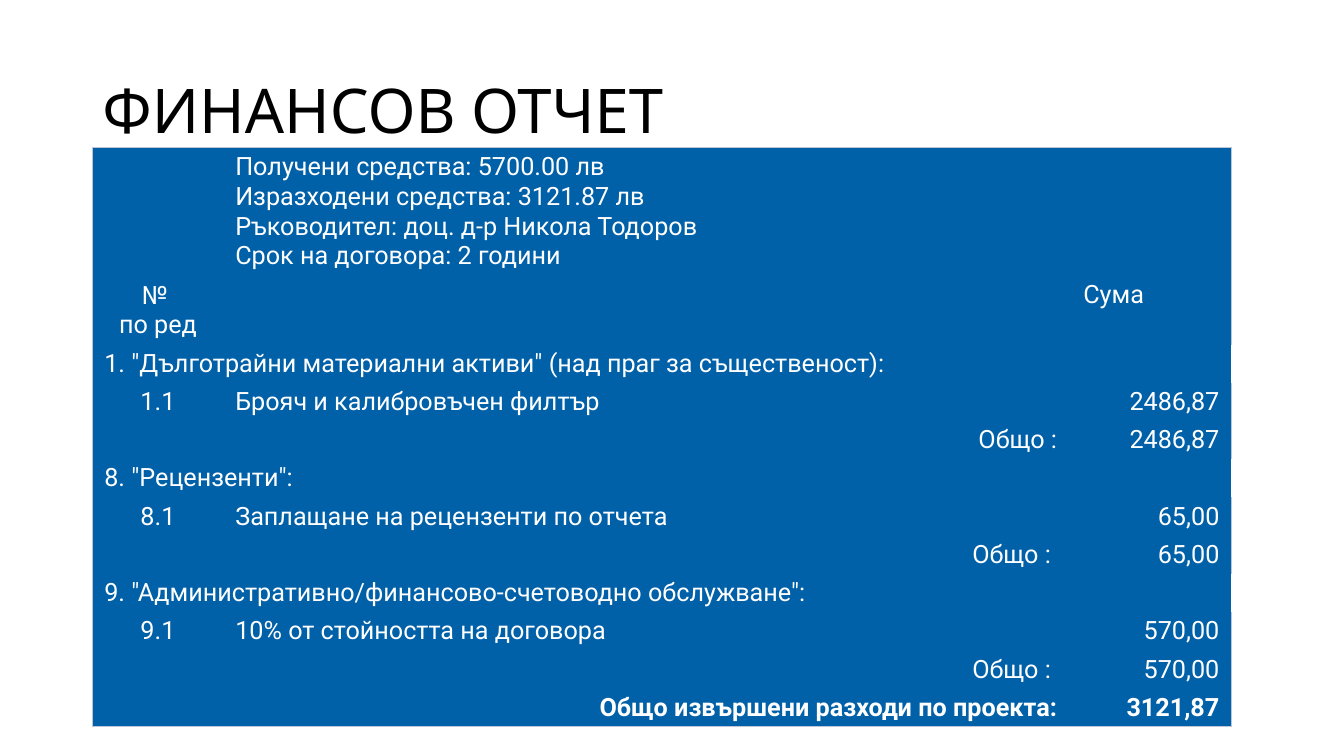
from lxml.etree import SubElement
from pptx import Presentation
from pptx.dml.color import RGBColor
from pptx.enum.text import MSO_ANCHOR as Anchor, PP_ALIGN as Align
from pptx.oxml.ns import qn
from pptx.util import Cm, Pt

TITLE = "ФИНАНСОВ ОТЧЕТ"
SUMMARY = "\n".join([
    "Получени средства: 5700.00 лв",
    "Изразходени средства: 3121.87 лв",
    "Ръководител: доц. д-р Никола Тодоров",
    "Срок на договора: 2 години",
])
ROWS = [
    ("", SUMMARY, ""),
    ("№ \vпо ред", "", "Сума"),
    ('1. "Дълготрайни материални активи" (над праг за същественост):',),
    ("1.1", "Брояч и калибровъчен филтър", "2486,87"),
    ("Общо :", "2486,87"),
    ('8. "Рецензенти":',),
    ("8.1", "Заплащане на рецензенти по отчета", "65,00"),
    ("Общо : ", "65,00"),
    ('9. "Административно/финансово-счетоводно обслужване":',),
    ("9.1", "10% от стойността на договора", "570,00"),
    ("Общо : ", "570,00"),
    ("Общо извършени разходи по проекта:", "3121,87"),
]
LAYOUTS = {
    1: [(0, 2, Align.LEFT)],
    2: [(0, 1, Align.RIGHT), (2, 2, Align.RIGHT)],
    3: [(0, 0, Align.CENTER), (1, 1, Align.LEFT), (2, 2, Align.RIGHT)],
}
COLUMN_WIDTHS = [3.3, 21.31, 4.09]
ROW_HEIGHTS = [3.18, 1.69] + [0.95] * 10
HEADER_ROW, AMOUNT_COLUMN = 1, 2
LAST_ROW = len(ROWS) - 1

BLACK = RGBColor(0, 0, 0)
WHITE = RGBColor(255, 255, 255)
BLUE = RGBColor(0x00, 0x60, 0xA8)
BORDER = RGBColor(0xBD, 0xC5, 0xDA)
PLAIN_STYLE = "{2D5ABB26-0587-4C30-8999-92F81FD0307C}"


def set_font(paragraph, name, size, color, bold=False):
    font = paragraph.font
    font.name, font.size, font.bold = name, Pt(size), bold
    font.color.rgb = color


def add_borders(cell, sides):
    properties = cell._tc.get_or_add_tcPr()
    for position, side in enumerate(sides):
        line = SubElement(properties, qn(f"a:ln{side}"), w=str(Pt(0.5)))
        fill = SubElement(line, qn("a:solidFill"))
        SubElement(fill, qn("a:srgbClr"), val=str(BORDER))
        properties.insert(position, line)


def fill_cell(cell, text, align, bold):
    cell.margin_left = cell.margin_right = Cm(0.3)
    cell.margin_top = cell.margin_bottom = Cm(0.1)
    cell.vertical_anchor = Anchor.MIDDLE
    cell.text = text
    for paragraph in cell.text_frame.paragraphs:
        paragraph.alignment = align
        set_font(paragraph, "Roboto", 18, WHITE, bold)


def add_title(slide):
    box = slide.shapes.add_textbox(Cm(2.33), Cm(1.01), Cm(29.21), Cm(3.68))
    frame = box.text_frame
    frame.word_wrap = True
    frame.vertical_anchor = Anchor.MIDDLE
    paragraph = frame.paragraphs[0]
    paragraph.text = TITLE
    paragraph.line_spacing = 0.9
    set_font(paragraph, "League Spartan", 44, BLACK)


def add_report(slide):
    table = slide.shapes.add_table(
        len(ROWS), len(COLUMN_WIDTHS), Cm(2.33), Cm(3.71),
        Cm(sum(COLUMN_WIDTHS)), Cm(sum(ROW_HEIGHTS))).table
    table.first_row = table.horz_banding = False
    table._tbl.tblPr.find(qn("a:tableStyleId")).text = PLAIN_STYLE
    for column, width in zip(table.columns, COLUMN_WIDTHS):
        column.width = Cm(width)
    for row, height in zip(table.rows, ROW_HEIGHTS):
        row.height = Cm(height)

    for row, texts in enumerate(ROWS):
        for text, (first, last, align) in zip(texts, LAYOUTS[len(texts)]):
            cell = table.cell(row, first)
            if last > first:
                cell.merge(table.cell(row, last))
            fill_cell(cell, text, align, bold=row == LAST_ROW)
        for column in range(len(COLUMN_WIDTHS)):
            cell = table.cell(row, column)
            cell.fill.solid()
            cell.fill.fore_color.rgb = BLUE
            edges = {"L": column == 0, "R": column == AMOUNT_COLUMN,
                     "T": row == 0, "B": row == LAST_ROW}
            add_borders(cell, [side for side, outer in edges.items() if outer])

    amount_header = table.cell(HEADER_ROW, AMOUNT_COLUMN)
    amount_header.margin_right = Cm(2.2)
    amount_header.vertical_anchor = Anchor.TOP


def main():
    presentation = Presentation()
    presentation.slide_width = Cm(33.87)
    presentation.slide_height = Cm(19.05)
    slide = presentation.slides.add_slide(presentation.slide_layouts[6])
    add_title(slide)
    add_report(slide)
    presentation.save("out.pptx")


if __name__ == "__main__":
    main()
